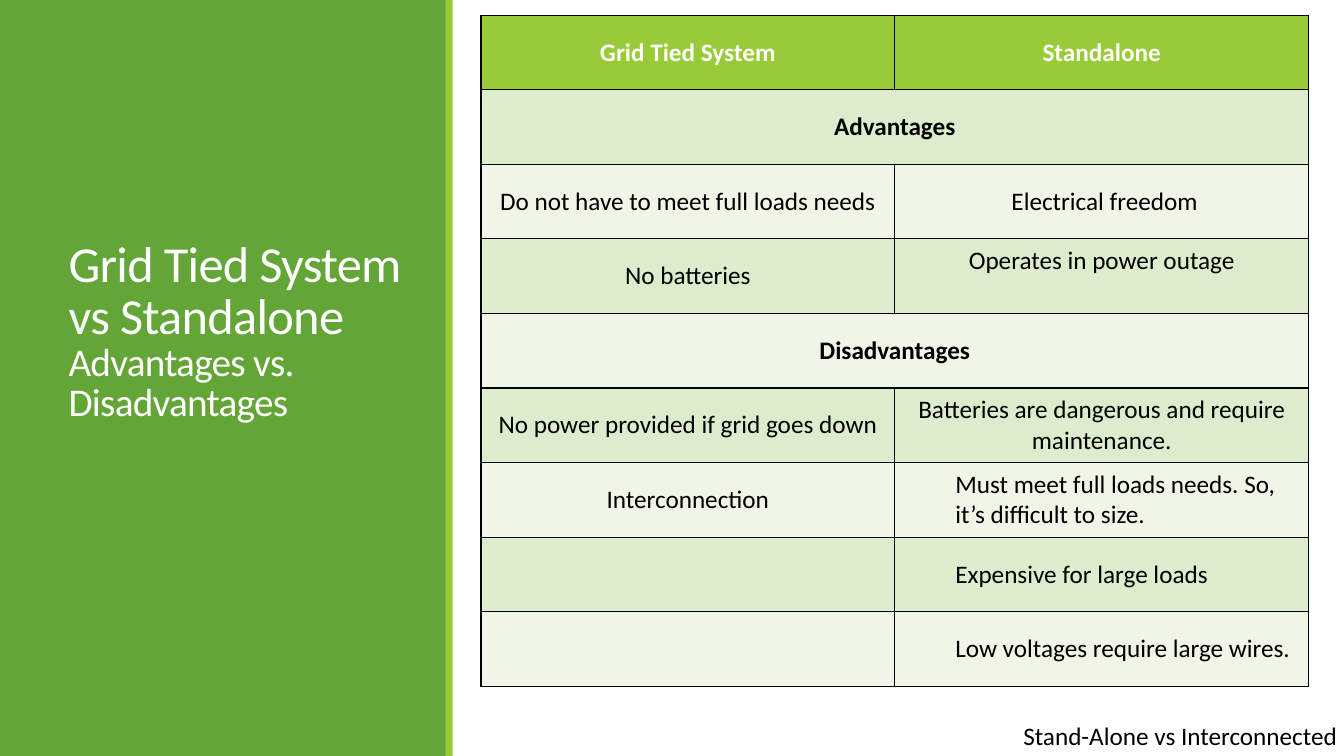
"""Build the slide comparing grid tied and standalone systems."""
import copy

import pptx
import pptx.dml.color
import pptx.enum.shapes
import pptx.enum.text
import pptx.oxml
import pptx.oxml.ns
import pptx.util

Inches, Pt = pptx.util.Inches, pptx.util.Pt
ALIGN = pptx.enum.text.PP_ALIGN
ANCHOR = pptx.enum.text.MSO_ANCHOR

FONT = "Calibri"
GREEN, LIME, WHITE, BLACK = "63A537", "99CB38", "FFFFFF", "000000"
BANDS = ["DEECCE", "EFF6E8"]
TITLE = ["Grid Tied System vs Standalone", "Advantages vs. Disadvantages"]
TITLE_SIZES = [36, 28]
FOOTER = "Stand-Alone vs Interconnected"
PANELS = [(0, 4.43, GREEN), (4.42, 0.07, LIME)]
ROWS = [
    ("Grid Tied System", "Standalone"),
    ("Advantages",),
    ("Do not have to meet full loads needs", " Electrical freedom"),
    ("No batteries", "Operates in power outage"),
    ("Disadvantages",),
    ("No power provided if grid goes down",
     "Batteries are dangerous and require maintenance."),
    ("Interconnection", "Must meet full loads needs. So, it’s difficult to size."),
    ("", "Expensive for large loads"),
    ("", "Low voltages require large wires."),
]
FIRST_INDENTED_ROW = 6
RAISED_CELL = (3, 1)
COL_W, ROW_H = 4.105, 0.74


def rgb(value):
    return pptx.dml.color.RGBColor.from_string(value)


def style(r, size, color, bold=False):
    r.font.name, r.font.size, r.font.bold = FONT, Pt(size), bold
    r.font.color.rgb = rgb(color)


def add_borders(cell):
    tcPr = cell._tc.get_or_add_tcPr()
    for side in ("lnL", "lnR", "lnT", "lnB"):
        tcPr.append(pptx.oxml.parse_xml(
            f'<a:{side} {pptx.oxml.ns.nsdecls("a")} w="{Pt(1)}"><a:solidFill>'
            f'<a:srgbClr val="{BLACK}"/></a:solidFill></a:{side}>'))


def add_panels(s):
    for left, width, color in PANELS:
        sp = s.shapes.add_shape(pptx.enum.shapes.MSO_SHAPE.RECTANGLE,
                                Inches(left), 0, Inches(width), Inches(7.5))
        sp.shadow.inherit = False
        sp.fill.solid()
        sp.fill.fore_color.rgb = rgb(color)
        sp.line.fill.background()


def add_title(s):
    sp = s.shapes.title
    sp.left, sp.top = Inches(0.58), Inches(1.76)
    sp.width, sp.height = Inches(3.5), Inches(2.5)
    s.shapes._spTree.append(sp._element)
    tf = sp.text_frame
    tf.word_wrap = True
    tf.auto_size = pptx.enum.text.MSO_AUTO_SIZE.NONE
    tf.vertical_anchor = ANCHOR.BOTTOM
    p = tf.paragraphs[0]
    p.text = "\v".join(TITLE)
    p.alignment, p.line_spacing = ALIGN.LEFT, 0.85
    for r, size in zip(p.runs, TITLE_SIZES):
        style(r, size, WHITE)
        r._r.get_or_add_rPr().set("spc", "-50")
    for br in p._p.findall(pptx.oxml.ns.qn("a:br")):
        br.append(copy.deepcopy(p.runs[0]._r.rPr))


def add_footer(s):
    sp = s.shapes.add_textbox(Inches(5.73), Inches(7.1), Inches(7.63), Inches(0.4))
    tf = sp.text_frame
    tf.word_wrap = True
    p = tf.paragraphs[0]
    p.text, p.alignment = FOOTER, ALIGN.RIGHT
    style(p.runs[0], 18, BLACK)


def fill_cell(cell, text, row, col):
    header, section = row == 0, len(ROWS[row]) == 1
    cell.vertical_anchor = ANCHOR.MIDDLE
    if (row, col) == RAISED_CELL:
        cell.margin_bottom = Inches(0.35)
    p = cell.text_frame.paragraphs[0]
    p.text = text
    if col == 1 and row >= FIRST_INDENTED_ROW:
        p.level = 1
        pPr = p._p.get_or_add_pPr()
        pPr.set("marL", str(Inches(0.5)))
        pPr.set("indent", "0")
    else:
        p.alignment = ALIGN.CENTER
    for r in p.runs:
        style(r, 18, WHITE if header else BLACK, header or section)


def add_comparison(s):
    table = s.shapes.add_table(len(ROWS), 2, Inches(4.77), Inches(0.15),
                               Inches(2 * COL_W), Inches(ROW_H * len(ROWS))).table
    for column in table.columns:
        column.width = Inches(COL_W)
    for row, texts in enumerate(ROWS):
        table.rows[row].height = Inches(ROW_H)
        for col in range(2):
            cell = table.cell(row, col)
            add_borders(cell)
            cell.fill.solid()
            cell.fill.fore_color.rgb = rgb(BANDS[(row - 1) % 2] if row else LIME)
        for col, text in enumerate(texts):
            fill_cell(table.cell(row, col), text, row, col)
        if len(texts) == 1:
            table.cell(row, 0).merge(table.cell(row, 1))


def main():
    prs = pptx.Presentation()
    prs.slide_width, prs.slide_height = Inches(13.33), Inches(7.5)
    s = prs.slides.add_slide(prs.slide_layouts[5])
    add_panels(s)
    add_footer(s)
    add_title(s)
    add_comparison(s)
    prs.save("out.pptx")


if __name__ == "__main__":
    main()
